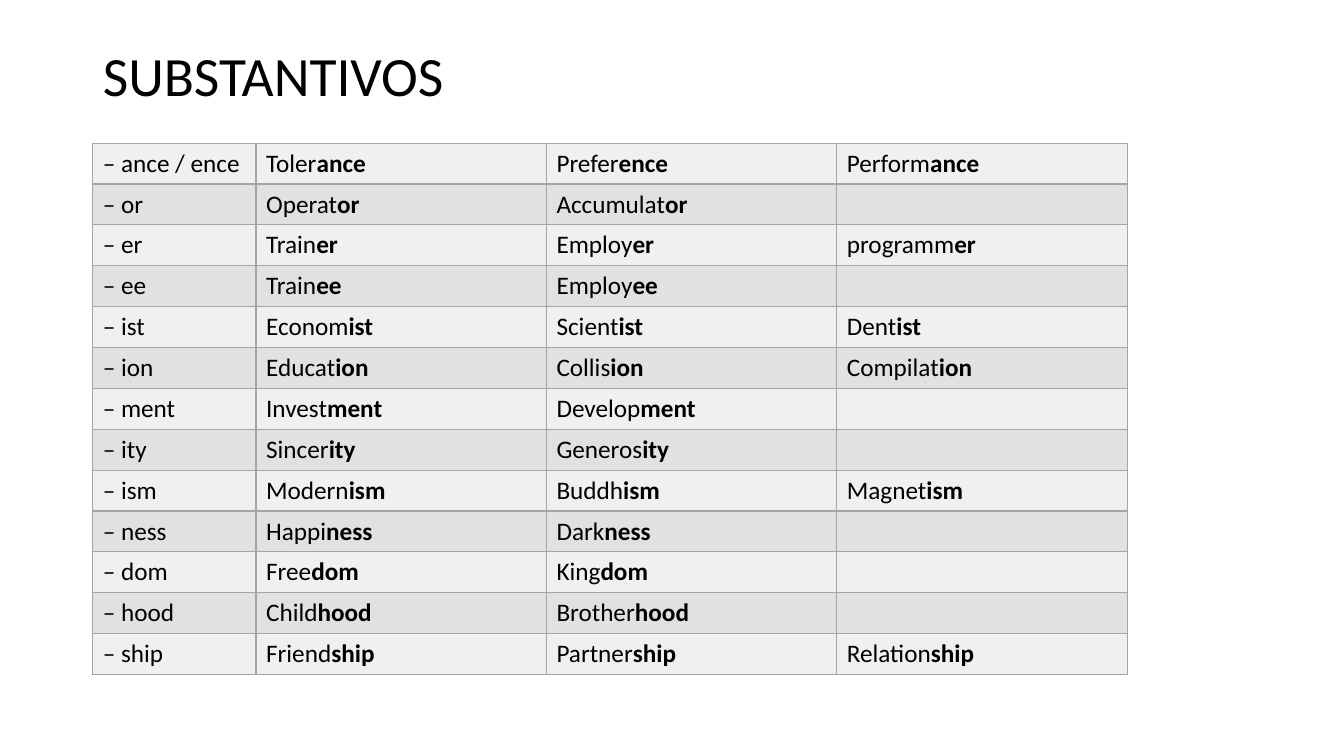
import pptx
import pptx.util
import pptx.dml.color
import pptx.enum.text
import pptx.oxml
import pptx.oxml.ns

Inches = pptx.util.Inches
Pt = pptx.util.Pt
RGBColor = pptx.dml.color.RGBColor

BLACK = RGBColor(0x00, 0x00, 0x00)
LIGHT = RGBColor(0xF0, 0xF0, 0xF0)
DARK = RGBColor(0xE1, 0xE1, 0xE1)
LINE = RGBColor(0xA5, 0xA5, 0xA5)
FONT = "Calibri"

# Each row: the suffix, then nouns with "|" before their bold ending
ROWS = [
    ("– ance / ence", "Toler|ance", "Prefer|ence", "Perform|ance"),
    ("– or", "Operat|or", "Accumulat|or"),
    ("– er", "Train|er", "Employ|er", "programm|er"),
    ("– ee", "Train|ee", "Employ|ee"),
    ("– ist", "Econom|ist", "Scient|ist", "Dent|ist"),
    ("– ion", "Educat|ion", "Collis|ion", "Compilat|ion"),
    ("– ment", "Invest|ment", "Develop|ment"),
    ("– ity", "Sincer|ity", "Generos|ity"),
    ("– ism", "Modern|ism", "Buddh|ism", "Magnet|ism"),
    ("– ness", "Happi|ness", "Dark|ness"),
    ("– dom", "Free|dom", "King|dom"),
    ("– hood", "Child|hood", "Brother|hood"),
    ("– ship", "Friend|ship", "Partner|ship", "Relation|ship"),
]
WIDTHS = [1.62, 2.88, 2.88, 2.88]
HEIGHT = 5.27


def style(run, size, bold=False):
    run.font.name = FONT
    run.font.size = Pt(size)
    run.font.bold = bold
    run.font.color.rgb = BLACK


def border(cell):
    props = cell._tc.get_or_add_tcPr()
    for side in ("lnL", "lnR", "lnT", "lnB"):
        props.append(pptx.oxml.parse_xml(
            f'<a:{side} {pptx.oxml.ns.nsdecls("a")} w="{Pt(1)}">'
            f'<a:solidFill><a:srgbClr val="{LINE}"/></a:solidFill></a:{side}>'))


deck = pptx.Presentation()
deck.slide_width = Inches(13.33)
deck.slide_height = Inches(7.5)
slide = deck.slides.add_slide(deck.slide_layouts[5])

# Title
title = slide.shapes.title
title.left, title.top = Inches(0.92), Inches(0.4)
title.width, title.height = Inches(11.5), Inches(0.75)
title.text_frame.text = "SUBSTANTIVOS"
title.text_frame.vertical_anchor = pptx.enum.text.MSO_ANCHOR.MIDDLE
head = title.text_frame.paragraphs[0]
head.alignment = pptx.enum.text.PP_ALIGN.LEFT
head.line_spacing = 0.9
style(head.runs[0], 39.6)

# Table of suffixes
table = slide.shapes.add_table(
    len(ROWS), len(WIDTHS), Inches(0.92), Inches(1.42),
    Inches(sum(WIDTHS)), Inches(HEIGHT)).table
table.first_row = False
table.horz_banding = False
for col, width in zip(table.columns, WIDTHS):
    col.width = Inches(width)

for i, words in enumerate(ROWS):
    table.rows[i].height = Inches(HEIGHT / len(ROWS))
    for j in range(len(WIDTHS)):
        cell = table.cell(i, j)
        border(cell)
        cell.fill.solid()
        cell.fill.fore_color.rgb = DARK if i % 2 else LIGHT
        if j < len(words):
            para = cell.text_frame.paragraphs[0]
            for k, part in enumerate(words[j].split("|")):
                run = para.add_run()
                run.text = part
                style(run, 18, bold=k == 1)

deck.save("out.pptx")
